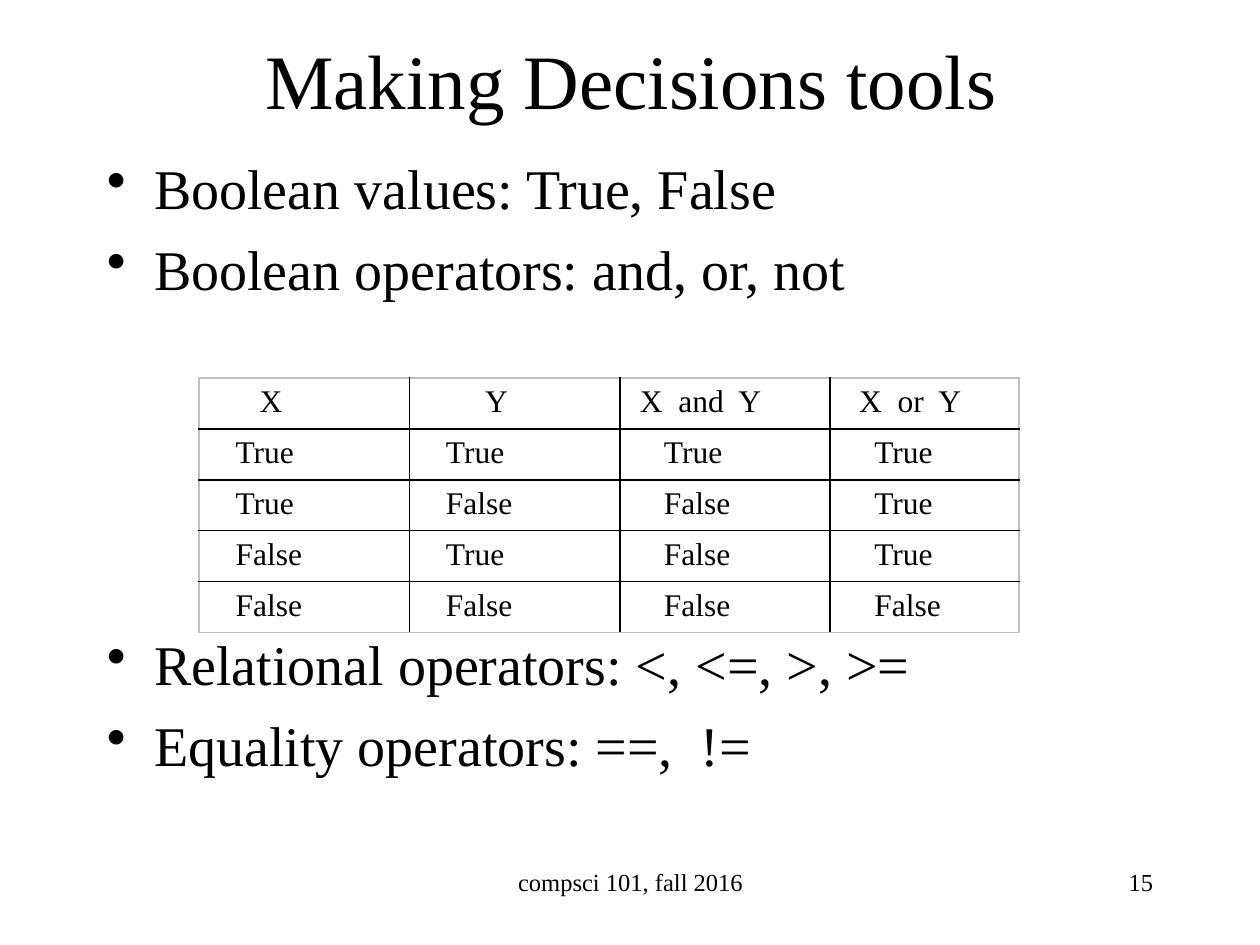
from lxml.etree import SubElement
from pptx import Presentation
from pptx.dml.color import RGBColor
from pptx.enum.text import MSO_ANCHOR, PP_ALIGN
from pptx.oxml.ns import qn
from pptx.util import Inches, Pt

COLORS = {"text": "000000", "grid": "000000", "frame": "BFBFBF"}
FONT = "Times New Roman"
BODY_SIZE, BODY_GAP, BODY_PITCH = 32, 8, 44.8
TABLE_GAP = BODY_GAP + 4 * BODY_PITCH  # room of four lines for the table

BULLETS = [
    ("Boolean values: True, False", BODY_GAP),
    ("Boolean operators: and, or, not", BODY_GAP),
    ("Relational operators: <, <=, >, >=", TABLE_GAP),
    ("Equality operators: ==,  !=", BODY_GAP),
]
HEADERS = ["X", "Y", "X  and  Y", "X  or  Y"]
HEADER_INDENTS = [0.48, 0.6, 0.16, 0.23]
VALUE_INDENTS = [0.29, 0.29, 0.35, 0.35]
COLUMN_WIDTHS = [1.67, 1.67, 1.67, 1.5]
INPUTS = [(x, y) for x in (True, False) for y in (True, False)]


class SlideBuilder:
    """Holds the text style and the slide being filled."""

    def __init__(self, page):
        self.page = page
        self.font = FONT
        self.color = RGBColor.from_string(COLORS["text"])

    def add_span(self, para, text, size):
        span = para.add_run()
        span.text = text
        style = {"name": self.font, "size": Pt(size)}
        for name, value in style.items():
            setattr(span.font, name, value)
        span.font.color.rgb = self.color

    def frame(self, place, anchor=MSO_ANCHOR.TOP):
        box = self.page.shapes.add_textbox(*map(Inches, place))
        frame = box.text_frame
        for name, value in {"word_wrap": True, "vertical_anchor": anchor}.items():
            setattr(frame, name, value)
        return frame

    def text(self, place, text, size, align, anchor=MSO_ANCHOR.TOP):
        para = self.frame(place, anchor).paragraphs[0]
        para.alignment = align
        self.add_span(para, text, size)

    def bullets(self, place, items):
        frame = self.frame(place)
        for index, (text, gap) in enumerate(items):
            para = frame.add_paragraph() if index else frame.paragraphs[0]
            para.space_before = Pt(gap)
            self.add_span(para, text, BODY_SIZE)
            properties = para._p.get_or_add_pPr()
            properties.set("marL", str(Inches(0.375)))
            properties.set("indent", str(-Inches(0.375)))
            SubElement(properties, qn("a:buChar"), char="•")

    def borders(self, cell, outer):
        """Draw all four edges; outer holds the sides on the table's rim."""
        properties = cell._tc.get_or_add_tcPr()
        for side in "LRTB":
            line = SubElement(properties, qn(f"a:ln{side}"), w=str(Pt(1)))
            fill = SubElement(line, qn("a:solidFill"))
            color = COLORS["frame" if side in outer else "grid"]
            SubElement(fill, qn("a:srgbClr"), val=color)

    def table(self, place, rows, widths):
        """Rows are pairs of cell texts and left margins."""
        last_row, last_column = len(rows) - 1, len(widths) - 1
        shape = self.page.shapes.add_table(len(rows), len(widths), *map(Inches, place))
        table = shape.table
        table.first_row = table.horz_banding = False
        for column, width in zip(table.columns, widths):
            column.width = Inches(width)
        for row, (texts, margins) in enumerate(rows):
            for column, (text, margin) in enumerate(zip(texts, margins)):
                cell = table.cell(row, column)
                cell.margin_left = Inches(margin)
                rim = {"L": column == 0, "R": column == last_column,
                       "T": row == 0, "B": row == last_row}
                self.borders(cell, [side for side, on in rim.items() if on])
                cell.fill.background()
                self.add_span(cell.text_frame.paragraphs[0], text, 18)


def main():
    deck = Presentation()
    deck.slide_width, deck.slide_height = Inches(10), Inches(7.5)
    slide = SlideBuilder(deck.slides.add_slide(deck.slide_layouts[6]))

    slide.text((0.76, 0, 8.5, 1.25), "Making Decisions tools", 44,
               PP_ALIGN.CENTER, MSO_ANCHOR.MIDDLE)
    slide.bullets((0.75, 1.17, 8.5, 5.75), BULLETS)
    truth_rows = [([str(value) for value in (x, y, x and y, x or y)], VALUE_INDENTS)
                  for x, y in INPUTS]
    slide.table((1.58, 3, 6.5, 2.02), [(HEADERS, HEADER_INDENTS), *truth_rows],
                COLUMN_WIDTHS)
    slide.text((3.42, 6.83, 3.17, 0.5), "compsci 101, fall 2016", 14, PP_ALIGN.CENTER)
    slide.text((7.17, 6.83, 2.08, 0.5), "15", 14, PP_ALIGN.RIGHT)
    deck.save("out.pptx")


if __name__ == "__main__":
    main()
